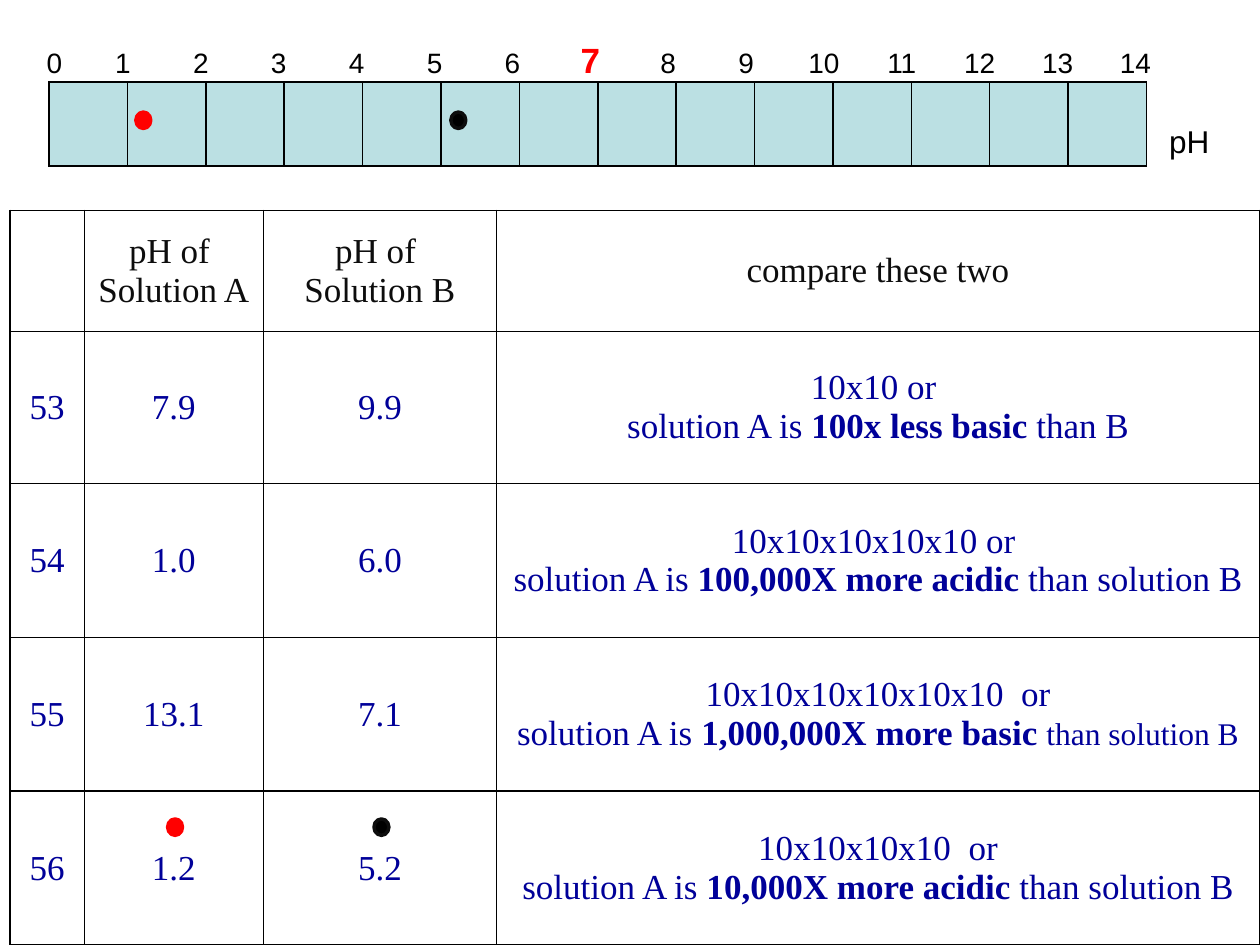
import pptx
import pptx.dml.color
import pptx.enum.shapes
import pptx.enum.text
import pptx.oxml.ns
import pptx.util
from lxml import etree

Cm = pptx.util.Cm
Pt = pptx.util.Pt
RGBColor = pptx.dml.color.RGBColor
MIDDLE = pptx.enum.text.MSO_ANCHOR.MIDDLE
CENTER = pptx.enum.text.PP_ALIGN.CENTER
qn = pptx.oxml.ns.qn

BLACK = RGBColor(0x00, 0x00, 0x00)
WHITE = RGBColor(0xFF, 0xFF, 0xFF)
RED = RGBColor(0xFF, 0x00, 0x00)
INK = RGBColor(0x0D, 0x0D, 0x0D)
NAVY = RGBColor(0x00, 0x00, 0x99)
PALE_TEAL = RGBColor(0xBB, 0xE0, 0xE3)

SCALE_STEP = 1.57
NEUTRAL = 7
STRONGEST = 14

HEADINGS = ["", "pH of \nSolution A", "pH of \nSolution B", "compare these two"]
COMPARISONS = [
    ("53", "7.9", "9.9", "10x10 or ", "100x less basic ", "than B", 20),
    ("54", "1.0", "6.0", "10x10x10x10x10 or ", "100,000X more acidic ", "than solution B", 20),
    ("55", "13.1", "7.1", "10x10x10x10x10x10  or", "1,000,000X more basic ", "than solution B", 18),
    ("56", "1.2", "5.2", "10x10x10x10  or", "10,000X more acidic ", "than solution B", 20),
]


def add_span(para, text, size, color, font="Times New Roman", bold=False):
    for index, line in enumerate(text.split("\n")):
        if index:
            para.add_line_break()
        span = para.add_run()
        span.text = line
        span.font.name = font
        span.font.size = Pt(size)
        span.font.bold = bold
        span.font.color.rgb = color


def add_box(page, left, top, width, height):
    box = page.shapes.add_textbox(Cm(left), Cm(top), Cm(width), Cm(height))
    box.text_frame.word_wrap = True
    box.text_frame.vertical_anchor = MIDDLE
    return box.text_frame.paragraphs[0]


def add_scale_labels(page):
    para = add_box(page, 0.69, 0.64, 23.39, 1.12)
    stops = etree.SubElement(para._p.get_or_add_pPr(), qn("a:tabLst"))
    for value in range(1, STRONGEST + 1):
        position = Cm(SCALE_STEP * value - 0.03)
        etree.SubElement(stops, qn("a:tab"), pos=str(int(position)), algn="ctr")
    below = "\t".join(str(value) for value in range(NEUTRAL))
    above = "\t".join(str(value) for value in range(NEUTRAL + 1, STRONGEST + 1))
    add_span(para, below + "\t", 16, BLACK, "Arial")
    add_span(para, str(NEUTRAL), 20, RED, "Arial", True)
    add_span(para, "\t" + above, 16, BLACK, "Arial")


def style_cell(cell, fill):
    properties = cell._tc.get_or_add_tcPr()
    for side in ("a:lnL", "a:lnR", "a:lnT", "a:lnB"):
        border = etree.SubElement(properties, qn(side), w=str(int(Pt(1))))
        paint = etree.SubElement(border, qn("a:solidFill"))
        etree.SubElement(paint, qn("a:srgbClr"), val=str(BLACK))
    cell.fill.solid()
    cell.fill.fore_color.rgb = fill
    cell.vertical_anchor = MIDDLE


def add_grid(page, left, top, widths, heights, fill):
    frame = page.shapes.add_table(len(heights), len(widths), Cm(left), Cm(top),
                                  Cm(sum(widths)), Cm(sum(heights)))
    table = frame.table
    table.first_row = False
    table.horz_banding = False
    for column, width in zip(table.columns, widths):
        column.width = Cm(width)
    for row, height in zip(table.rows, heights):
        row.height = Cm(height)
    for cell in table.iter_cells():
        style_cell(cell, fill)
    return table


def add_cell_text(cell, text, color):
    para = cell.text_frame.paragraphs[0]
    para.alignment = CENTER
    if text:
        add_span(para, text, 20, color)
    return para


def add_comparison_table(page):
    table = add_grid(page, 0.2, 4.24, [1.5, 3.61, 4.7, 15.38],
                     [2.44, 3.07, 3.1, 3.1, 3.1], WHITE)
    for column, heading in enumerate(HEADINGS):
        add_cell_text(table.cell(0, column), heading, INK)
    for row, comparison in enumerate(COMPARISONS, 1):
        *values, factors, result, ending, ending_size = comparison
        for column, value in enumerate(values):
            add_cell_text(table.cell(row, column), value, NAVY)
        para = add_cell_text(table.cell(row, 3), factors + "\nsolution A is ", NAVY)
        add_span(para, result, 20, NAVY, bold=True)
        add_span(para, ending, ending_size, NAVY)


def add_dot(page, left, top, fill, outline):
    dot = page.shapes.add_shape(pptx.enum.shapes.MSO_SHAPE.OVAL,
                                Cm(left), Cm(top), Cm(0.3), Cm(0.33))
    dot.shadow.inherit = False
    dot.fill.solid()
    dot.fill.fore_color.rgb = fill
    dot.line.color.rgb = outline
    dot.line.width = Pt(2)


def main():
    deck = pptx.Presentation()
    deck.slide_width = Cm(25.4)
    deck.slide_height = Cm(19.05)
    page = deck.slides.add_slide(deck.slide_layouts[6])

    add_scale_labels(page)
    add_span(add_box(page, 23.32, 2.34, 1.47, 1.02), "pH", 18, BLACK, "Arial")
    add_grid(page, 0.99, 1.65, [22.12 / STRONGEST] * STRONGEST, [1.7], PALE_TEAL)
    add_comparison_table(page)

    scale_top, table_top = 2.26, 16.51
    add_dot(page, 2.74, scale_top, RED, RED)
    add_dot(page, 3.38, table_top, RED, RED)
    add_dot(page, 9.09, scale_top, BLACK, INK)
    add_dot(page, 7.54, table_top, BLACK, INK)

    deck.save("out.pptx")


if __name__ == "__main__":
    main()
